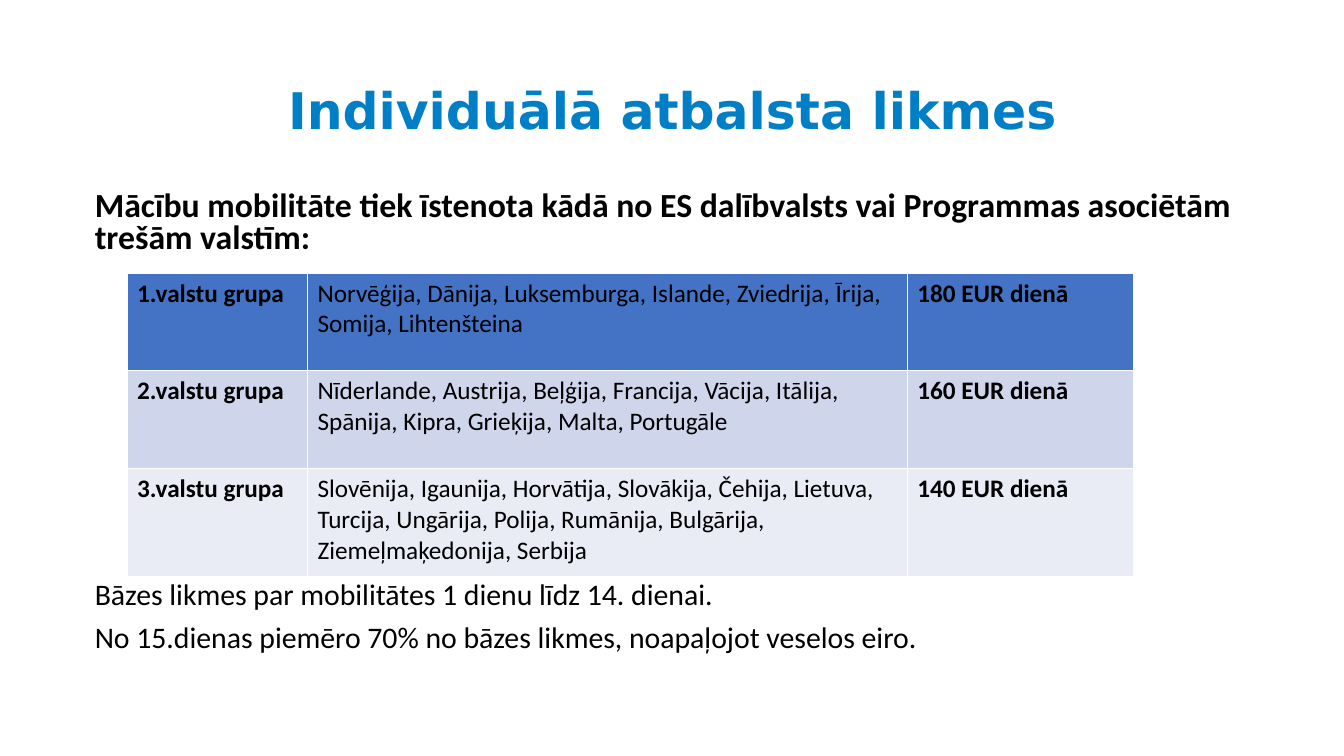
from dataclasses import dataclass

from lxml.etree import SubElement
from pptx import Presentation
from pptx.dml.color import RGBColor
from pptx.enum.text import MSO_ANCHOR, MSO_AUTO_SIZE, PP_ALIGN
from pptx.oxml.ns import qn
from pptx.util import Inches, Pt

BLUE = RGBColor(0x00, 0x7F, 0xC7)
BLACK = RGBColor(0x00, 0x00, 0x00)
HEAD = RGBColor(0x44, 0x72, 0xC4)
BAND = RGBColor(0xCF, 0xD5, 0xEA)
PALE = RGBColor(0xE9, 0xEB, 0xF5)


@dataclass
class Line:
    text: str
    size: float
    bold: bool
    align: PP_ALIGN
    gap: float


@dataclass
class Group:
    name: str
    lands: str
    rate: str
    fill: RGBColor
    height: float


LINES = [
    Line("Mācību mobilitāte tiek īstenota kādā no\u00a0ES dalībvalsts vai Programmas "
         "asociētām trešām valstīm:", 24.1, True, PP_ALIGN.LEFT, 0),
    Line("Bāzes likmes par mobilitātes 1 dienu līdz 14. dienai.",
         21.3, False, PP_ALIGN.JUSTIFY, 233),
    Line("No 15.dienas piemēro 70% no bāzes likmes, noapaļojot veselos eiro.",
         21.3, False, PP_ALIGN.JUSTIFY, 10),
]
GROUPS = [
    Group("1.valstu grupa", "Norvēģija, Dānija, Luksemburga, Islande, Zviedrija, Īrija, "
          "Somija, Lihtenšteina", "180 EUR dienā", HEAD, 0.97),
    Group("2.valstu grupa", "Nīderlande, Austrija, Beļģija, Francija, Vācija, Itālija, "
          "Spānija, Kipra, Grieķija, Malta, Portugāle", "160 EUR dienā", BAND, 0.97),
    Group("3.valstu grupa", "Slovēnija, Igaunija, Horvātija, Slovākija, Čehija, Lietuva, "
          "Turcija, Ungārija, Polija, Rumānija, Bulgārija, Ziemeļmaķedonija, Serbija",
          "140 EUR dienā", PALE, 1.07),
]
WIDTHS = [1.79, 5.95, 2.24]


def place(shape, left: float, top: float, width: float, height: float) -> None:
    shape.left, shape.top = Inches(left), Inches(top)
    shape.width, shape.height = Inches(width), Inches(height)


def write(para, text: str, size: float, bold: bool,
          face: str = "Calibri", color: RGBColor = BLACK) -> None:
    run = para.add_run()
    run.text = text
    run.font.name = face
    run.font.size = Pt(size)
    run.font.bold = bold
    run.font.color.rgb = color


def add_title(slide) -> None:
    title = slide.shapes.title
    place(title, 0.92, 0.4, 11.5, 1.45)
    frame = title.text_frame
    frame.auto_size = MSO_AUTO_SIZE.NONE
    frame.vertical_anchor = MSO_ANCHOR.MIDDLE
    para = frame.paragraphs[0]
    para.alignment = PP_ALIGN.CENTER
    para.line_spacing = 0.9
    write(para, "Individuālā atbalsta likmes", 36, True, "DejaVu Sans", BLUE)


def add_body(slide, lines: list[Line]) -> None:
    body = slide.placeholders[1]
    place(body, 0.84, 1.85, 11.58, 4.84)
    frame = body.text_frame
    frame.auto_size = MSO_AUTO_SIZE.NONE
    for i, line in enumerate(lines):
        para = frame.add_paragraph() if i else frame.paragraphs[0]
        props = para._p.get_or_add_pPr()
        props.set("marL", "0")
        props.set("indent", "0")
        SubElement(props, qn("a:buNone"))
        para.alignment = line.align
        para.line_spacing = 0.8
        para.space_before = Pt(line.gap)
        write(para, line.text, line.size, line.bold)


def add_rates(slide, groups: list[Group]) -> None:
    frame = slide.shapes.add_table(
        len(groups), len(WIDTHS), Inches(1.26), Inches(2.71),
        Inches(sum(WIDTHS)), Inches(sum(group.height for group in groups)))
    table = frame.table
    for col, width in zip(table.columns, WIDTHS):
        col.width = Inches(width)
    for row, group in zip(table.rows, groups):
        row.height = Inches(group.height)
        texts = (group.name, group.lands, group.rate)
        for cell, text in zip(row.cells, texts):
            cell.fill.solid()
            cell.fill.fore_color.rgb = group.fill
            write(cell.text_frame.paragraphs[0], text, 18, text != group.lands)


def main() -> None:
    deck = Presentation()
    deck.slide_width, deck.slide_height = Inches(13.33), Inches(7.5)
    slide = deck.slides.add_slide(deck.slide_layouts[1])
    add_title(slide)
    add_body(slide, LINES)
    add_rates(slide, GROUPS)
    deck.save("out.pptx")


if __name__ == "__main__":
    main()
